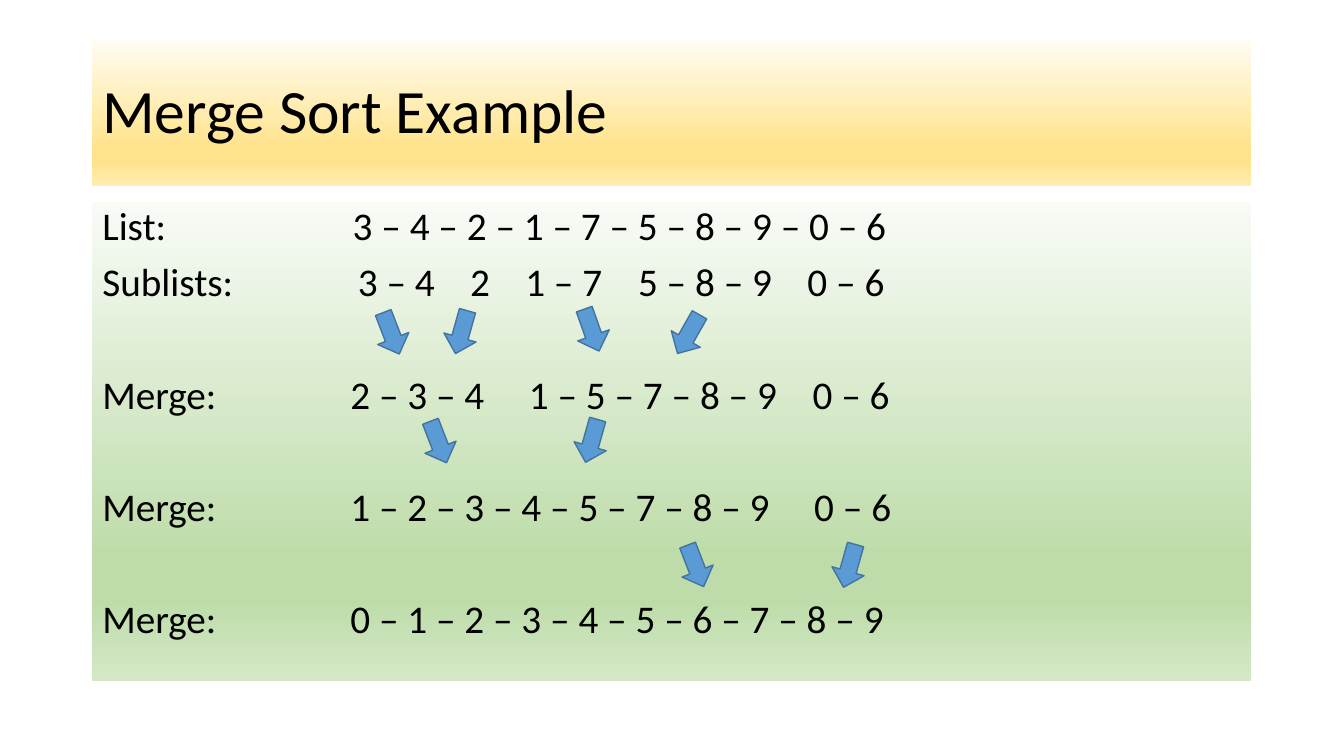
from lxml.etree import SubElement
from pptx import Presentation
from pptx.dml.color import RGBColor
from pptx.enum.shapes import MSO_SHAPE
from pptx.enum.text import MSO_ANCHOR, PP_ALIGN
from pptx.oxml.ns import qn
from pptx.util import Cm, Pt


def color(hex_code):
    return RGBColor.from_string(hex_code)


def write(paragraph, text, size=28, before=0, tabs=()):
    """Fill a paragraph; tabs are stop positions in cm."""
    paragraph.alignment = PP_ALIGN.LEFT
    paragraph.line_spacing = 0.9
    paragraph.space_before = Pt(before)
    if tabs:
        stops = SubElement(paragraph._p.get_or_add_pPr(), qn("a:tabLst"))
        for position in tabs:
            SubElement(stops, qn("a:tab"), pos=str(Cm(position)), algn="l")
    run = paragraph.add_run()
    run.text = text
    run.font.size = Pt(size)
    run.font.name = "Calibri"
    run.font.color.rgb = color("000000")


deck = Presentation()
deck.slide_width, deck.slide_height = Cm(33.87), Cm(19.05)
slide = deck.slides.add_slide(deck.slide_layouts[6])

# Title and content panels: top, height, anchor, gradient colours
stop_positions = (0, 74, 83, 100)
panels = []
for top, height, anchor, shades in (
    (1.02, 3.68, MSO_ANCHOR.MIDDLE, ("FFFCF2", "FFE38C", "FFE38C", "FFECB2")),
    (5.08, 12.09, MSO_ANCHOR.TOP, ("F8FBF6", "BEDCAA", "BEDCAA", "D4E8C6")),
):
    panel = slide.shapes.add_shape(
        MSO_SHAPE.RECTANGLE, Cm(2.33), Cm(top), Cm(29.21), Cm(height))
    panel.shadow.inherit = False
    panel.line.fill.background()
    panel.fill.gradient()
    panel.fill.gradient_angle = 270
    stops = panel._element.spPr.find(qn("a:gradFill")).find(qn("a:gsLst"))
    for default_stop in list(stops):
        stops.remove(default_stop)
    for position, shade in zip(stop_positions, shades):
        stop = SubElement(stops, qn("a:gs"), pos=str(position * 1000))
        SubElement(stop, qn("a:srgbClr"), val=str(color(shade)))
    panel.text_frame.word_wrap = True
    panel.text_frame.vertical_anchor = anchor
    panels.append(panel.text_frame)
title, steps = panels

write(title.paragraphs[0], "Merge Sort Example", size=44)

# Sorting steps: label, space before, sublists with their tab stops
sorting_steps = (
    ("List:", 10, {6.31: "3421758906"}),
    ("Sublists:", 10,
     {6.44: "34", 9.27: "2", 10.66: "17", 13.5: "589", 17.77: "06"}),
    ("Merge:", 50, {6.25: "234", 10.75: "15789", 17.9: "06"}),
    ("Merge:", 50, {6.25: "12345789", 17.94: "06"}),
    ("Merge:", 50, {6.25: "0123456789"}),
)
for index, (label, before, sublists) in enumerate(sorting_steps):
    line = steps.add_paragraph() if index else steps.paragraphs[0]
    cells = [label] + [" – ".join(digits) for digits in sublists.values()]
    write(line, "\t".join(cells), before=before, tabs=sublists)

# Arrows from sublists to their merged list: left, top, rotation
for left, top, rotation in (
    (9.3, 7.98, 68.9), (11.07, 7.95, 105.7),
    (14.35, 7.9, 70.5), (16.79, 8, 119.6),
    (10.49, 10.72, 68.9), (14.35, 10.69, 105.7),
    (16.97, 13.84, 68.9), (20.85, 13.84, 105.7),
):
    merge_arrow = slide.shapes.add_shape(
        MSO_SHAPE.RIGHT_ARROW, Cm(left), Cm(top), Cm(1.12), Cm(0.84))
    merge_arrow.rotation = rotation
    merge_arrow.shadow.inherit = False
    merge_arrow.fill.solid()
    merge_arrow.fill.fore_color.rgb = color("5B9BD5")
    merge_arrow.line.color.rgb = color("43739E")
    merge_arrow.line.width = Pt(1)

deck.save("out.pptx")
